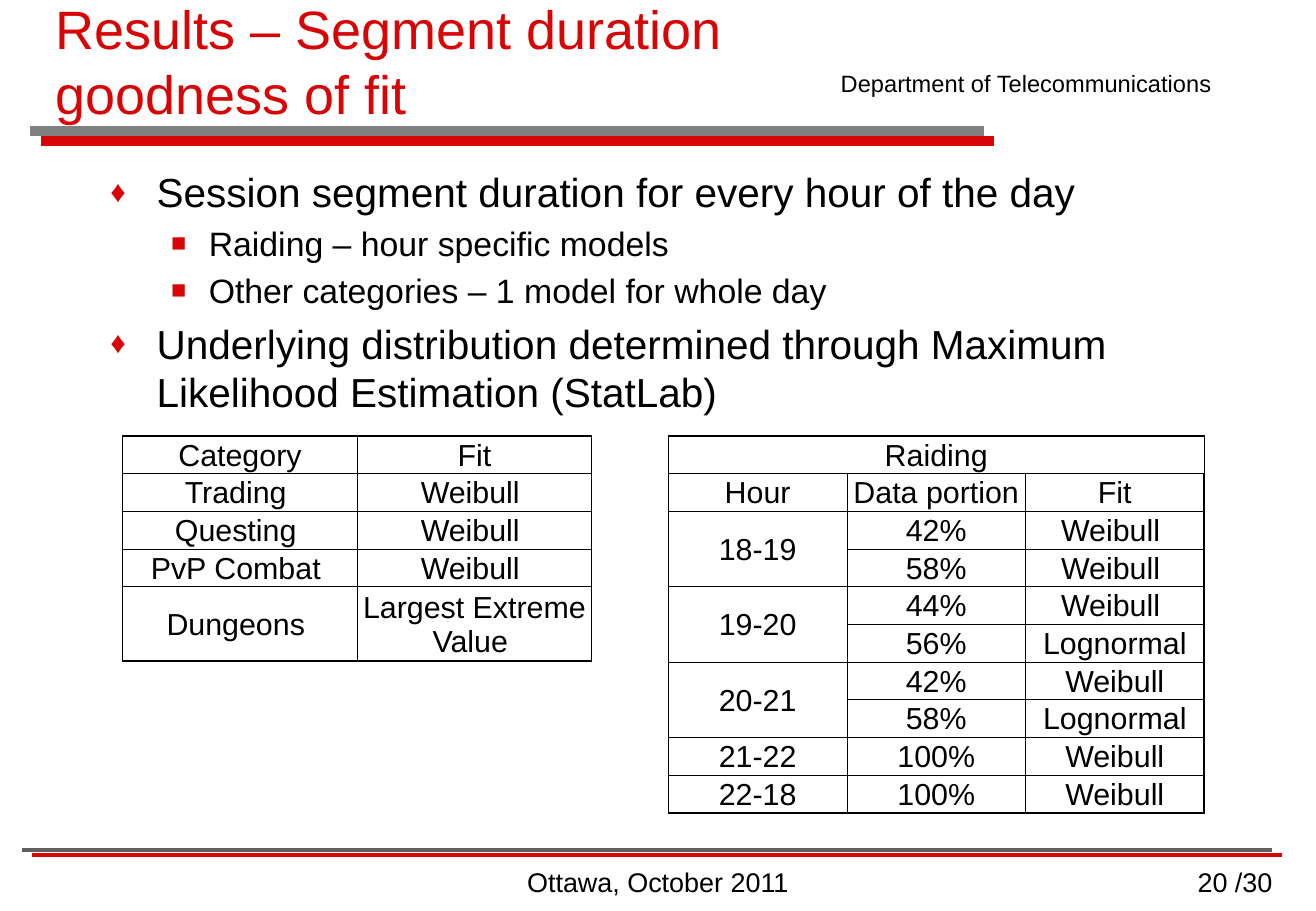
from lxml import etree
from pptx import Presentation
from pptx.dml.color import RGBColor
from pptx.enum import shapes, text
from pptx.oxml.ns import qn
from pptx.util import Inches, Pt

THEME = {
    "font": "Arial", "red": "D70505", "black": "000000",
    "grey": "808080", "dark_grey": "5F5F5F",
    "title": 32, "level": (24, 20), "cell": 18, "footer": 16, "label": 14,
}
LEFT, CENTER, RIGHT = text.PP_ALIGN.LEFT, text.PP_ALIGN.CENTER, text.PP_ALIGN.RIGHT
TOP, MIDDLE = text.MSO_ANCHOR.TOP, text.MSO_ANCHOR.MIDDLE

# start x, end x, y, colour, width, shadow distance (pt), shadow angle
RULES = [
    (8.1, 0.25, 1.08, "grey", 6, 8.5, 45),
    (10.47, 0.18, 7, "dark_grey", 2.25, 6.7, 27),
]
# text, box, size, colour, alignment, anchor
LABELS = [
    ("Department of Telecommunications", (6.82, 0.52, 3.42, 0.34), "label", "black", LEFT, TOP),
    ("Results – Segment duration goodness of fit", (0.36, 0, 7.14, 1), "title", "red", LEFT, MIDDLE),
    ("Ottawa, October 2011", (4, 7.08, 2.83, 0.42), "footer", "black", CENTER, TOP),
    ("20 /30", (8.31, 7.08, 2.26, 0.42), "footer", "black", RIGHT, TOP),
]
BODY_BOX = (0.81, 1.33, 9.21, 2.2)
BODY = [
    (0, "Session segment duration for every hour of the day"),
    (1, "Raiding – hour specific models"),
    (1, "Other categories – 1 model for whole day"),
    (0, "Underlying distribution determined through Maximum Likelihood Estimation (StatLab)"),
]
BULLETS = [("♦", 0.38, 0.38), ("■", 0.81, 0.31)]  # sign, margin, hanging indent

# None continues the cell to the left in the first row, the cell above elsewhere
CATEGORY_ROWS = [
    ("Category", "Fit"),
    ("Trading ", "Weibull "),
    ("Questing ", "Weibull "),
    ("PvP Combat ", "Weibull "),
    ("Dungeons ", "Largest Extreme Value "),
]
RAIDING_ROWS = [
    ("Raiding", None, None),
    ("Hour", "Data portion", "Fit"),
    ("18-19", "42%", "Weibull "),
    (None, "58%", "Weibull "),
    ("19-20", "44%", "Weibull "),
    (None, "56%", "Lognormal"),
    ("20-21", "42%", "Weibull"),
    (None, "58%", "Lognormal"),
    ("21-22", "100%", "Weibull"),
    ("22-18", "100%", "Weibull"),
]
# rows, left, column width, row heights
TABLES = [
    (CATEGORY_ROWS, 1.01, 1.93, [0.29] * 4 + [0.57]),
    (RAIDING_ROWS, 5.5, 1.47, [0.29] * 5 + [0.3] * 5),
]
TABLE_TOP = 3.59


def color(name):
    return RGBColor.from_string(THEME[name])


def add_xml(parent, tag, **attrs):
    return etree.SubElement(parent, qn(tag), {k: str(v) for k, v in attrs.items()})


def format_paragraph(p, size, color_name="black", align=LEFT):
    p.alignment = align
    for r in p.runs:
        r.font.name = THEME["font"]
        r.font.size = Pt(size)
        r.font.color.rgb = color(color_name)


def add_box(slide, box, anchor=TOP):
    tf = slide.shapes.add_textbox(*map(Inches, box)).text_frame
    tf.word_wrap = True
    tf.vertical_anchor = anchor
    return tf


def add_rule(slide, x1, x2, y, color_name, width, distance, angle):
    """Draw a horizontal line with a solid red shadow."""
    line = slide.shapes.add_connector(
        shapes.MSO_CONNECTOR.STRAIGHT, Inches(x1), Inches(y), Inches(x2), Inches(y))
    line.line.color.rgb = color(color_name)
    line.line.width = Pt(width)
    effects = add_xml(line._element.spPr, "a:effectLst")
    shadow = add_xml(effects, "a:outerShdw", dist=Pt(distance), dir=angle * 60000,
                     algn="ctr", rotWithShape=0)
    add_xml(shadow, "a:srgbClr", val=THEME["red"])


def add_body(slide):
    tf = add_box(slide, BODY_BOX)
    for i, (level, line) in enumerate(BODY):
        p = tf.add_paragraph() if i else tf.paragraphs[0]
        p.text = line
        p.level = level
        size = THEME["level"][level]
        format_paragraph(p, size)
        p.space_before = Pt(0.2 * size)
        sign, margin, hanging = BULLETS[level]
        pPr = p._p.get_or_add_pPr()
        pPr.set("marL", str(Inches(margin)))
        pPr.set("indent", str(-Inches(hanging)))
        add_xml(add_xml(pPr, "a:buClr"), "a:srgbClr", val=THEME["red"])
        add_xml(pPr, "a:buSzPct", val=75000)
        add_xml(pPr, "a:buFont", typeface=THEME["font"])
        add_xml(pPr, "a:buChar", char=sign)


def set_borders(cell, outer):
    """Draw four black borders, heavier on the sides named in outer."""
    tcPr = cell._tc.get_or_add_tcPr()
    for i, side in enumerate("LRTB"):
        ln = add_xml(tcPr, "a:ln" + side, w=Pt(1 if side in outer else 0.5))
        add_xml(add_xml(ln, "a:solidFill"), "a:srgbClr", val=THEME["black"])
        tcPr.insert(i, ln)


def add_table(slide, rows, left, col_width, heights):
    n_rows, n_cols = len(rows), len(rows[0])
    table = slide.shapes.add_table(
        n_rows, n_cols, Inches(left), Inches(TABLE_TOP),
        Inches(col_width * n_cols), Inches(sum(heights))).table
    table.first_row = table.horz_banding = False
    for column in table.columns:
        column.width = Inches(col_width)
    for row, height in zip(table.rows, heights):
        row.height = Inches(height)
    for i, row in enumerate(rows):
        for j, value in enumerate(row):
            cell = table.cell(i, j)
            cell.fill.background()
            edges = {"L": j == 0, "R": j == n_cols - 1, "T": i == 0, "B": i == n_rows - 1}
            set_borders(cell, [side for side, on in edges.items() if on])
            cell.margin_left = cell.margin_right = cell.margin_top = Inches(0.01)
            cell.margin_bottom = 0
            cell.vertical_anchor = MIDDLE
            if value is not None:
                cell.text_frame.text = value
                format_paragraph(cell.text_frame.paragraphs[0], THEME["cell"], align=CENTER)
            elif i:
                table.cell(i - 1, j).merge(cell)
    if None in rows[0]:
        table.cell(0, 0).merge(table.cell(0, n_cols - 1))


def main():
    prs = Presentation()
    prs.slide_width, prs.slide_height = Inches(10.83), Inches(7.5)
    slide = prs.slides.add_slide(prs.slide_layouts[6])
    for rule in RULES:
        add_rule(slide, *rule)
    for line, box, size, color_name, align, anchor in LABELS:
        tf = add_box(slide, box, anchor)
        tf.text = line
        format_paragraph(tf.paragraphs[0], THEME[size], color_name, align)
    add_body(slide)
    for table in TABLES:
        add_table(slide, *table)
    prs.save("out.pptx")


if __name__ == "__main__":
    main()
